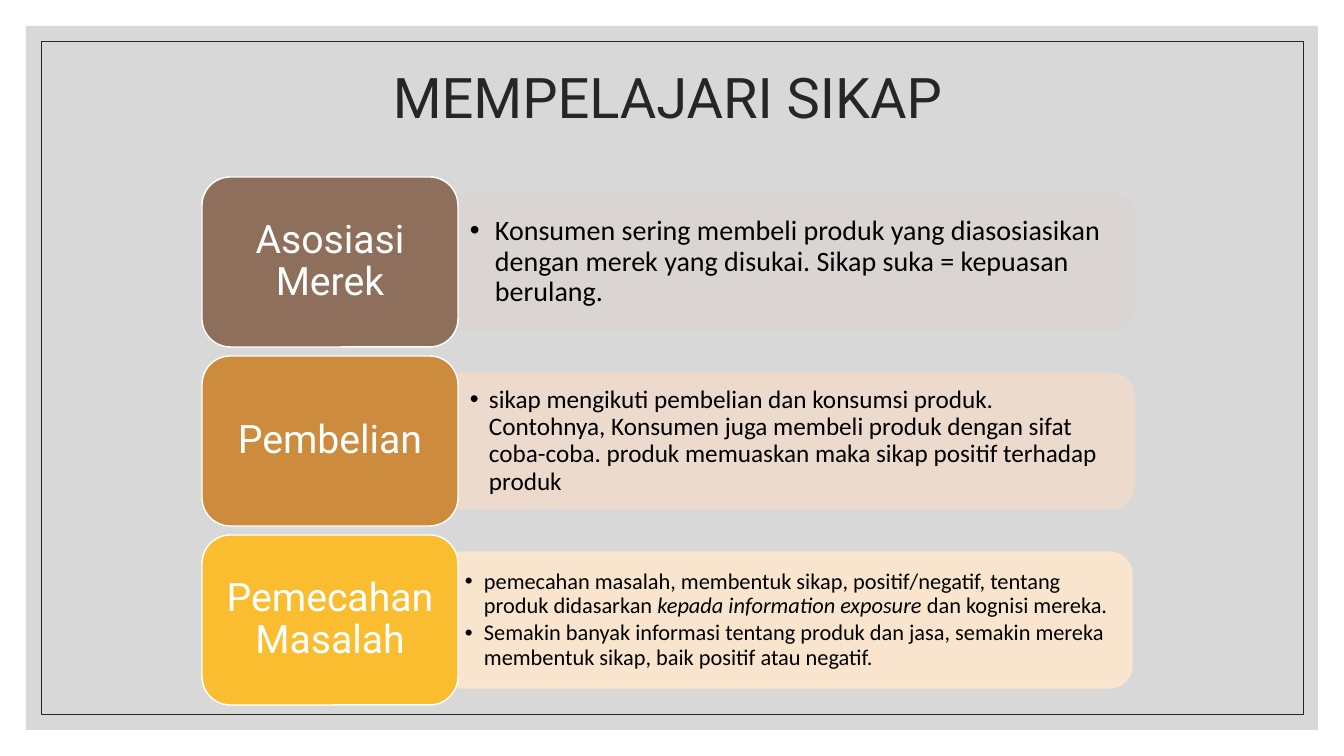
from lxml.etree import SubElement
from pptx import Presentation
from pptx.dml.color import RGBColor
from pptx.enum.shapes import MSO_SHAPE as Preset
from pptx.enum.text import MSO_ANCHOR as Anchor, MSO_AUTO_SIZE as AutoSize, PP_ALIGN as Align
from pptx.oxml.ns import qn
from pptx.util import Pt

SCALE = 914400 / 100.8
LABEL_LEFT, LABEL_TOP, LABEL_WIDTH, LABEL_HEIGHT = 202, 177, 256, 170
ROW_PITCH = 179
PANEL_LEFT, PANEL_HEIGHT = LABEL_LEFT + LABEL_WIDTH, 136
NOTE_HEIGHT = 123

ROWS = [
    {"label": "Asosiasi Merek", "color": "8D6F5B", "tint": "DBD5D2",
     "width": 676, "size": 20, "indent": 25, "inset": (12, 6),
     "notes": [[("Konsumen sering membeli produk yang diasosiasikan dengan merek "
                 "yang disukai. Sikap suka = kepuasan berulang.", False)]]},
    {"label": "Pembelian", "color": "CC8B3D", "tint": "EFDCCC",
     "width": 676, "size": 18, "indent": 19, "inset": (12, 6),
     "notes": [[("sikap mengikuti pembelian dan konsumsi produk. Contohnya, Konsumen "
                 "juga membeli produk dengan sifat coba-coba. produk memuaskan maka "
                 "sikap positif terhadap produk", False)]]},
    {"label": "Pemecahan Masalah", "color": "FABD2F", "tint": "FDE7CD",
     "width": 674, "size": 16, "indent": 19, "inset": (7, 3),
     "notes": [[("pemecahan masalah, membentuk sikap, positif/negatif, tentang produk "
                 "didasarkan ", False),
                ("kepada information exposure ", True),
                ("dan kognisi mereka.", False)],
               [("Semakin banyak informasi tentang produk dan jasa, semakin mereka "
                 "membentuk sikap, baik positif atau negatif.", False)]]},
]


def px(length):
    """Turn pixels into EMU."""
    return round(length * SCALE)


def rgb(value):
    """Turn a hex string into a colour."""
    return RGBColor.from_string(value)


def paint(fill, color, opacity=100):
    """Give a fill a solid colour and an opacity in percent."""
    fill.solid()
    fill.fore_color.rgb = rgb(color)
    if opacity < 100:
        srgb = next(fill._xPr.iter(qn("a:srgbClr")))
        SubElement(srgb, qn("a:alpha"), val=str(opacity * 1000))


def add_block(page, preset, bounds, color=None, line=None, weight=1, opacity=100):
    """Add a preset shape with an optional fill and outline."""
    block = page.shapes.add_shape(preset, *map(px, bounds))
    block.shadow.inherit = False
    if color:
        paint(block.fill, color, opacity)
    else:
        block.fill.background()
    if line:
        block.line.width = Pt(weight)
        paint(block.line.fill, line, opacity)
    else:
        block.line.fill.background()
    return block


def set_frame(frame, inset):
    """Wrap a text frame, centre it vertically and set its margins."""
    frame.word_wrap = True
    frame.auto_size = AutoSize.NONE
    frame.vertical_anchor = Anchor.MIDDLE
    frame.margin_left = frame.margin_right = px(inset[0])
    frame.margin_top = frame.margin_bottom = px(inset[1])


def add_span(para, text, font, size, color, italic=False):
    """Add one formatted run to a paragraph."""
    span = para.add_run()
    span.text = text
    span.font.name = font
    span.font.size = Pt(size)
    span.font.italic = italic
    span.font.color.rgb = rgb(color)


def add_heading(frame, text, size, color):
    """Write one centred paragraph of heading text."""
    para = frame.paragraphs[0]
    para.alignment = Align.CENTER
    para.line_spacing = 0.9
    add_span(para, text, "Roboto", size, color)


def set_bullet(para, indent):
    """Give a paragraph a round bullet with a hanging indent."""
    props = para._p.get_or_add_pPr()
    props.set("marL", str(px(indent)))
    props.set("indent", str(-px(indent)))
    SubElement(props, qn("a:buFont"), typeface="Arial")
    SubElement(props, qn("a:buChar"), char="•")


def add_panel(page, row, middle):
    """Add the tinted panel, turned so its round corners face right."""
    width = row["width"]
    left = PANEL_LEFT + (width - PANEL_HEIGHT) / 2
    bounds = (left, middle - width / 2, PANEL_HEIGHT, width)
    panel = add_block(page, Preset.ROUND_2_SAME_RECTANGLE, bounds,
                      row["tint"], row["tint"], opacity=90)
    panel.rotation = 90


def add_notes(page, row, middle):
    """Add the bulleted text over a panel."""
    bounds = (PANEL_LEFT, middle - NOTE_HEIGHT / 2, row["width"] - 7, NOTE_HEIGHT)
    box = page.shapes.add_textbox(*map(px, bounds))
    frame = box.text_frame
    set_frame(frame, row["inset"])
    for index, spans in enumerate(row["notes"]):
        para = frame.add_paragraph() if index else frame.paragraphs[0]
        set_bullet(para, row["indent"])
        para.alignment = Align.LEFT
        para.line_spacing = 0.9
        para.space_after = Pt(row["size"] * 0.15)
        for text, italic in spans:
            add_span(para, text, "Calibri", row["size"], "000000", italic)


def add_label(page, row, top):
    """Add the rounded label at the left of a row."""
    bounds = (LABEL_LEFT, top, LABEL_WIDTH, LABEL_HEIGHT)
    label = add_block(page, Preset.ROUNDED_RECTANGLE, bounds, row["color"], "FFFFFF")
    set_frame(label.text_frame, (12, 6))
    add_heading(label.text_frame, row["label"], 28, "FFFFFF")


def add_title(page, text):
    """Fill the title placeholder and bring it to the front."""
    title = page.shapes.title
    title.left, title.top, title.width, title.height = map(px, (113, 25, 1109, 151))
    set_frame(title.text_frame, (10, 5))
    add_heading(title.text_frame, text, 40, "262626")
    page.shapes._spTree.append(title._element)


def main():
    """Build and save the slide."""
    deck = Presentation()
    deck.slide_width, deck.slide_height = px(1344), px(756)
    page = deck.slides.add_slide(deck.slide_layouts[5])
    add_block(page, Preset.RECTANGLE, (26, 26, 1292, 704), "BFBFBF", opacity=60)
    add_block(page, Preset.RECTANGLE, (41, 41, 1262, 673), line="262626", weight=0.5)
    for index, row in enumerate(ROWS):
        top = LABEL_TOP + index * ROW_PITCH
        middle = top + LABEL_HEIGHT / 2
        add_panel(page, row, middle)
        add_notes(page, row, middle)
        add_label(page, row, top)
    add_title(page, "MEMPELAJARI SIKAP")
    deck.save("out.pptx")


if __name__ == "__main__":
    main()
